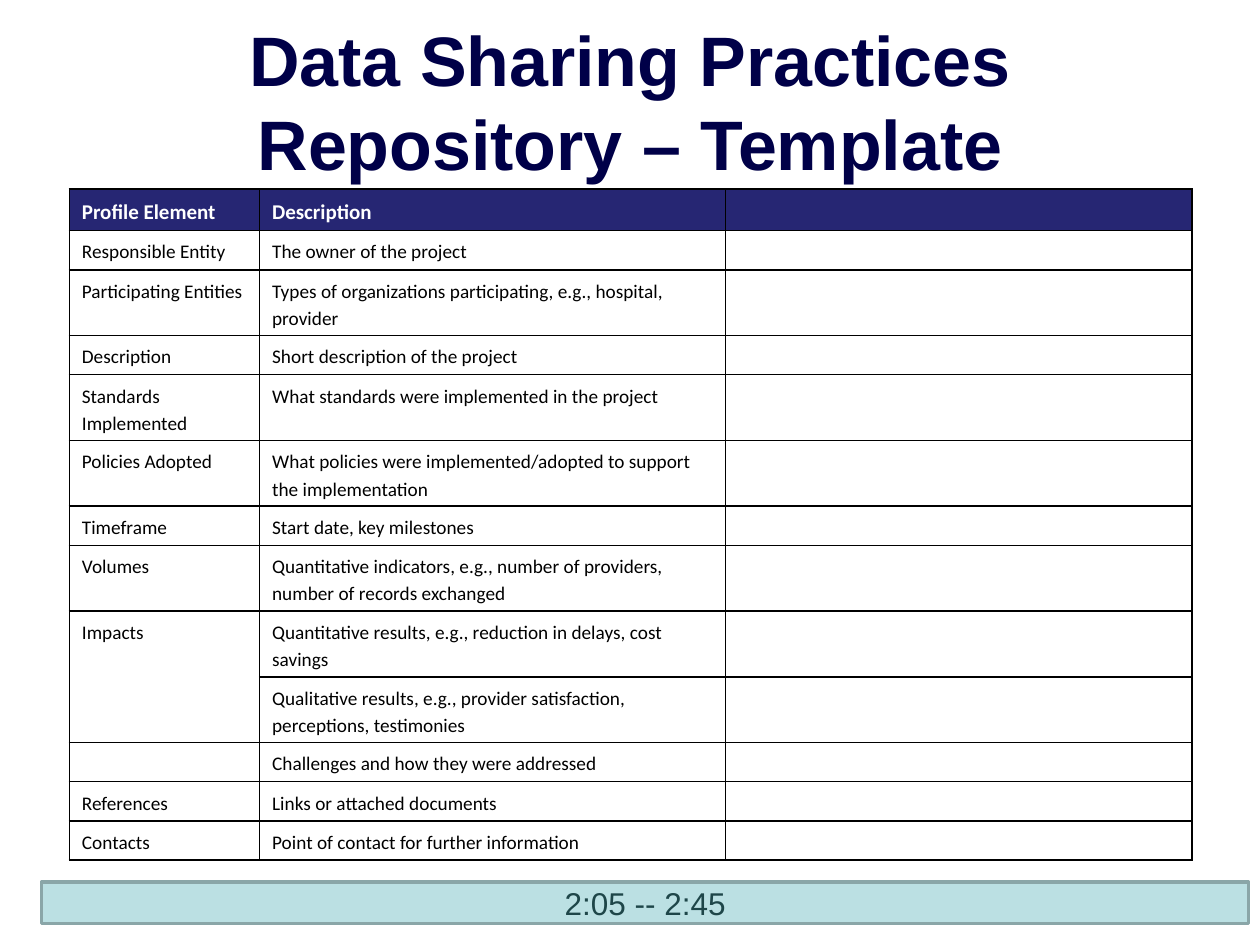
from lxml import etree
from pptx import Presentation
from pptx.dml.color import RGBColor
from pptx.enum import shapes, text
from pptx.oxml import ns
from pptx.util import Inches, Pt

# Content
TITLE = "Data Sharing Practices Repository – Template"
SCHEDULE = "2:05 -- 2:45"
HEADER = ("Profile Element", "Description", "")
PROFILE = [
    ("Responsible Entity", "The owner of the project"),
    ("Participating Entities",
     "Types of organizations participating, e.g., hospital, provider"),
    ("Description", "Short description of the project"),
    ("Standards Implemented", "What standards were implemented in the project"),
    ("Policies Adopted",
     "What policies were implemented/adopted to support the implementation"),
    ("Timeframe", "Start date, key milestones"),
    ("Volumes",
     "Quantitative indicators, e.g., number of providers, number of records exchanged"),
    ("Impacts", "Quantitative results, e.g., reduction in delays, cost savings"),
    ("", "Qualitative results, e.g., provider satisfaction, perceptions, testimonies"),
    ("", "Challenges and how they were addressed"),
    ("References", "Links or attached documents"),
    ("Contacts", "Point of contact for further information"),
]
ROWS = [HEADER] + [(*entry, "") for entry in PROFILE]
COLUMN_WIDTHS = (1.51, 3.7, 3.7)
ROW_HEIGHTS = (0.32, 0.3, 0.5, 0.3, 0.5, 0.5, 0.3, 0.5, 0.3, 0.5, 0.3, 0.3, 0.3)
IMPACTS_ROW = 8

NAVY = RGBColor(0x00, 0x00, 0x48)
HEADER_BLUE = RGBColor(0x26, 0x26, 0x73)
PALE_TEAL = RGBColor(0xBB, 0xE0, 0xE3)
GREY_TEAL = RGBColor(0x8A, 0xA6, 0xA8)
DARK_TEAL = RGBColor(0x1E, 0x46, 0x49)
BLACK = RGBColor(0, 0, 0)
WHITE = RGBColor(0xFF, 0xFF, 0xFF)


def add_run(para, words, size, color, name="Arial", bold=False):
    span = para.add_run()
    span.text = words
    font = span.font
    font.size, font.name, font.bold = Pt(size), name, bold
    font.color.rgb = color


def add_centred_text(shape, words, size, color, bold=False):
    frame = shape.text_frame
    frame.word_wrap = True
    frame.vertical_anchor = text.MSO_ANCHOR.MIDDLE
    para = frame.paragraphs[0]
    para.alignment = text.PP_ALIGN.CENTER
    add_run(para, words, size, color, bold=bold)


def add_borders(cell):
    """Draw a 1 pt black line on every side; must precede the cell fill."""
    properties = cell._tc.get_or_add_tcPr()
    for side in ("lnL", "lnR", "lnT", "lnB"):
        line = etree.SubElement(properties, ns.qn(f"a:{side}"), w=str(Pt(1)))
        fill = etree.SubElement(line, ns.qn("a:solidFill"))
        etree.SubElement(fill, ns.qn("a:srgbClr"), val=str(BLACK))


def fill_cell(cell, words, is_header):
    size = 12 if is_header else 11
    add_borders(cell)
    if is_header:
        cell.fill.solid()
        cell.fill.fore_color.rgb = HEADER_BLUE
    else:
        cell.fill.background()
    para = cell.text_frame.paragraphs[0]
    para.line_spacing = 1.15
    if words:
        add_run(para, words, size, WHITE if is_header else BLACK, "Calibri", is_header)
    else:
        # An empty cell keeps the small size so that its row does not grow
        etree.SubElement(para._p, ns.qn("a:endParaRPr"), sz=str(size * 100))


deck = Presentation()
deck.slide_width, deck.slide_height = Inches(10), Inches(7.5)
page = deck.slides.add_slide(deck.slide_layouts[6])

# Title
title = page.shapes.add_textbox(Inches(0.5), Inches(0.17), Inches(9), Inches(1.25))
add_centred_text(title, TITLE, 40, NAVY, bold=True)

# Schedule bar
bar = page.shapes.add_shape(shapes.MSO_SHAPE.RECTANGLE, Inches(0.33), Inches(7),
                            Inches(9.58), Inches(0.33))
bar.shadow.inherit = False
bar.fill.solid()
bar.fill.fore_color.rgb = PALE_TEAL
bar.line.color.rgb = GREY_TEAL
bar.line.width = Pt(2)
add_centred_text(bar, SCHEDULE, 18, DARK_TEAL)

# Template table
table = page.shapes.add_table(len(ROWS), len(COLUMN_WIDTHS), Inches(0.55), Inches(1.5),
                              Inches(sum(COLUMN_WIDTHS)), Inches(sum(ROW_HEIGHTS))).table
table.horz_banding = False
for column, width in zip(table.columns, COLUMN_WIDTHS):
    column.width = Inches(width)
for row, height in zip(table.rows, ROW_HEIGHTS):
    row.height = Inches(height)
for r, entry in enumerate(ROWS):
    for c, words in enumerate(entry):
        fill_cell(table.cell(r, c), words, r == 0)
table.cell(IMPACTS_ROW, 0).merge(table.cell(IMPACTS_ROW + 1, 0))

deck.save("out.pptx")
